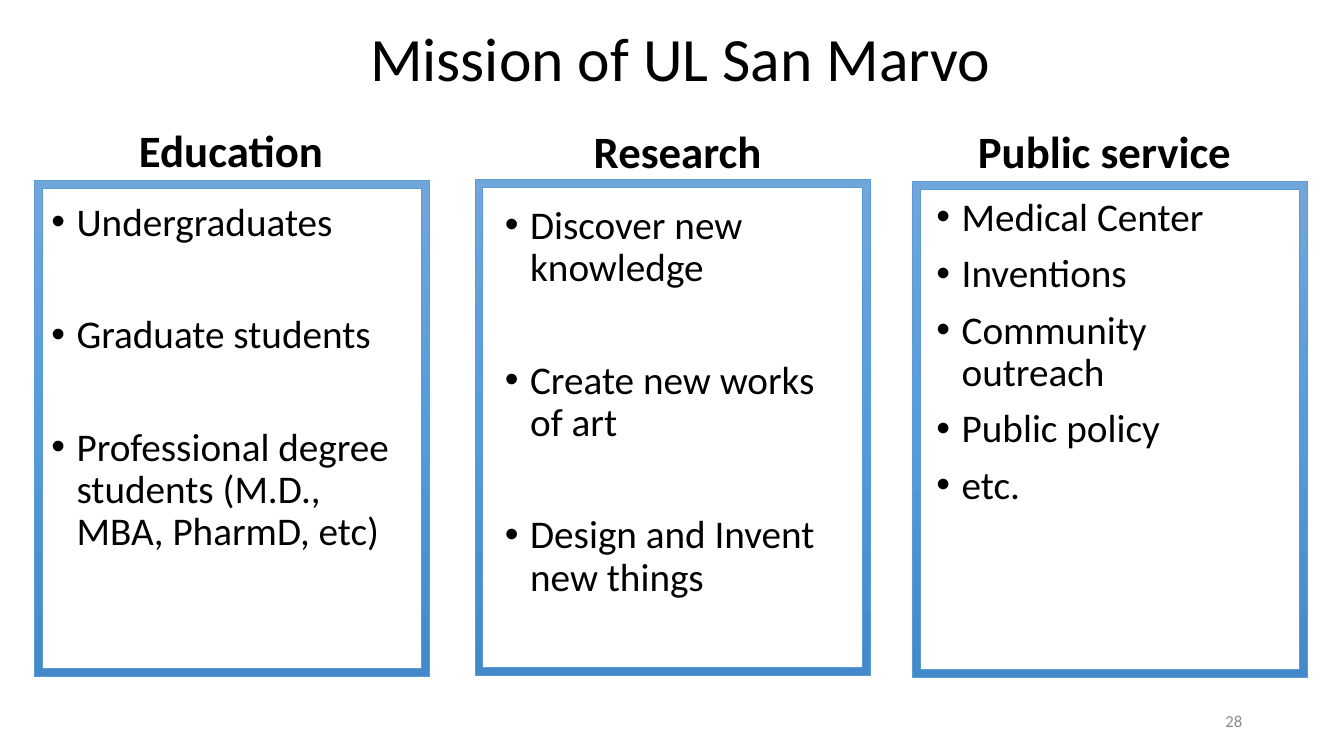
from dataclasses import dataclass

from lxml import etree
from pptx import Presentation, util as u
from pptx.dml.color import RGBColor
from pptx.enum import shapes, text
from pptx.oxml import ns

EMU_PER_PX = 9144
FONT = "Calibri"
BLACK = "000000"
FRAME_SIZE = (392, 492)
FRAME_STOPS = ((0, "71A6DB"), (50, "559BDB"), (100, "448ACA"))
LIST_INDENT = 25


@dataclass(frozen=True)
class Column:
    """One mission column; boxes are left, top, width, height in px."""
    heading: str
    heading_box: tuple[int, int, int, int]
    frame_corner: tuple[int, int]
    list_box: tuple[int, int, int, int]
    items: tuple[str, ...]
    item_gap: int


COLUMNS = (
    Column("Education", (128, 116, 225, 64), (34, 179), (41, 196, 373, 476),
           ("Undergraduates", "Graduate students",
            "Professional degree students (M.D., MBA, PharmD, etc)"), 50),
    Column("Research", (579, 117, 225, 64), (471, 178), (491, 199, 352, 476),
           ("Discover new knowledge", "Create new works of art",
            "Design and Invent new things"), 50),
    Column("Public service", (960, 117, 415, 64), (905, 180), (919, 191, 373, 476),
           ("Medical Center", "Inventions", "Community outreach",
            "Public policy", "etc."), 10),
)


def px(length: int) -> u.Emu:
    return u.Emu(length * EMU_PER_PX)


def color(value: str) -> RGBColor:
    return RGBColor.from_string(value)


def place(shape, box: tuple[int, int, int, int]) -> None:
    shape.left, shape.top, shape.width, shape.height = map(px, box)


def style(paragraph, size: int, tint: str = BLACK, bold: bool = False,
          align=text.PP_ALIGN.LEFT) -> None:
    paragraph.font.name = FONT
    paragraph.font.size = u.Pt(size)
    paragraph.font.bold = bold
    paragraph.font.color.rgb = color(tint)
    paragraph.alignment = align


def add_label(slide, box: tuple[int, int, int, int], label: str, size: int, **options) -> None:
    shape = slide.shapes.add_textbox(*map(px, box))
    shape.text_frame.word_wrap = True
    shape.text_frame.vertical_anchor = text.MSO_ANCHOR.MIDDLE
    shape.text_frame.text = label
    style(shape.text_frame.paragraphs[0], size, **options)


def add_frame(slide, corner: tuple[int, int]) -> None:
    frame = slide.shapes.add_shape(shapes.MSO_SHAPE.FRAME, *map(px, corner + FRAME_SIZE))
    frame.shadow.inherit = False
    frame.adjustments[0] = 0.02
    frame.line.color.rgb = color("5B9BD5")
    frame.line.width = u.Pt(0.5)
    frame.fill.gradient()
    gradient = frame.fill._fill._gradFill
    stops = gradient.find(ns.qn("a:gsLst"))
    for stop in list(stops):
        stops.remove(stop)
    for position, tint in FRAME_STOPS:
        stop = etree.SubElement(stops, ns.qn("a:gs"), pos=str(position * 1000))
        etree.SubElement(stop, ns.qn("a:srgbClr"), val=tint)
    direction = gradient.find(ns.qn("a:lin"))
    direction.set("ang", str(90 * 60000))
    direction.set("scaled", "0")


def fill_list(shape, column: Column) -> None:
    place(shape, column.list_box)
    frame = shape.text_frame
    frame.word_wrap = True
    frame.auto_size = text.MSO_AUTO_SIZE.NONE
    frame.vertical_anchor = text.MSO_ANCHOR.TOP
    frame.text = "\n".join(column.items)
    for index, paragraph in enumerate(frame.paragraphs):
        style(paragraph, 28)
        paragraph.line_spacing = 0.9
        paragraph.space_before = u.Pt(column.item_gap if index else 10)
        properties = paragraph._p.get_or_add_pPr()
        properties.set("marL", str(px(LIST_INDENT)))
        properties.set("indent", str(px(-LIST_INDENT)))
        bullet_font = etree.Element(ns.qn("a:buFont"), typeface="Arial")
        bullet = etree.Element(ns.qn("a:buChar"), char="•")
        defaults = properties.find(ns.qn("a:defRPr"))
        defaults.addprevious(bullet_font)
        defaults.addprevious(bullet)


def main() -> None:
    """Build the mission slide and save it."""
    presentation = Presentation()
    presentation.slide_width, presentation.slide_height = px(1333), px(750)
    slide = presentation.slides.add_slide(presentation.slide_layouts[1])
    title, body = slide.placeholders
    place(title, (357, 15, 831, 92))
    title.text_frame.text = "Mission of UL San Marvo"
    title.text_frame.vertical_anchor = text.MSO_ANCHOR.MIDDLE
    title.text_frame.auto_size = text.MSO_AUTO_SIZE.NONE
    title.text_frame.paragraphs[0].line_spacing = 0.9
    style(title.text_frame.paragraphs[0], 44)
    for index, column in enumerate(COLUMNS):
        shape = slide.shapes.add_textbox(0, 0, 0, 0) if index else body
        fill_list(shape, column)
        add_frame(slide, column.frame_corner)
        add_label(slide, column.heading_box, column.heading, 32, bold=True)
    add_label(slide, (942, 695, 300, 40), "28", 12, tint="8C8C8C",
              align=text.PP_ALIGN.RIGHT)
    presentation.save("out.pptx")


if __name__ == "__main__":
    main()
